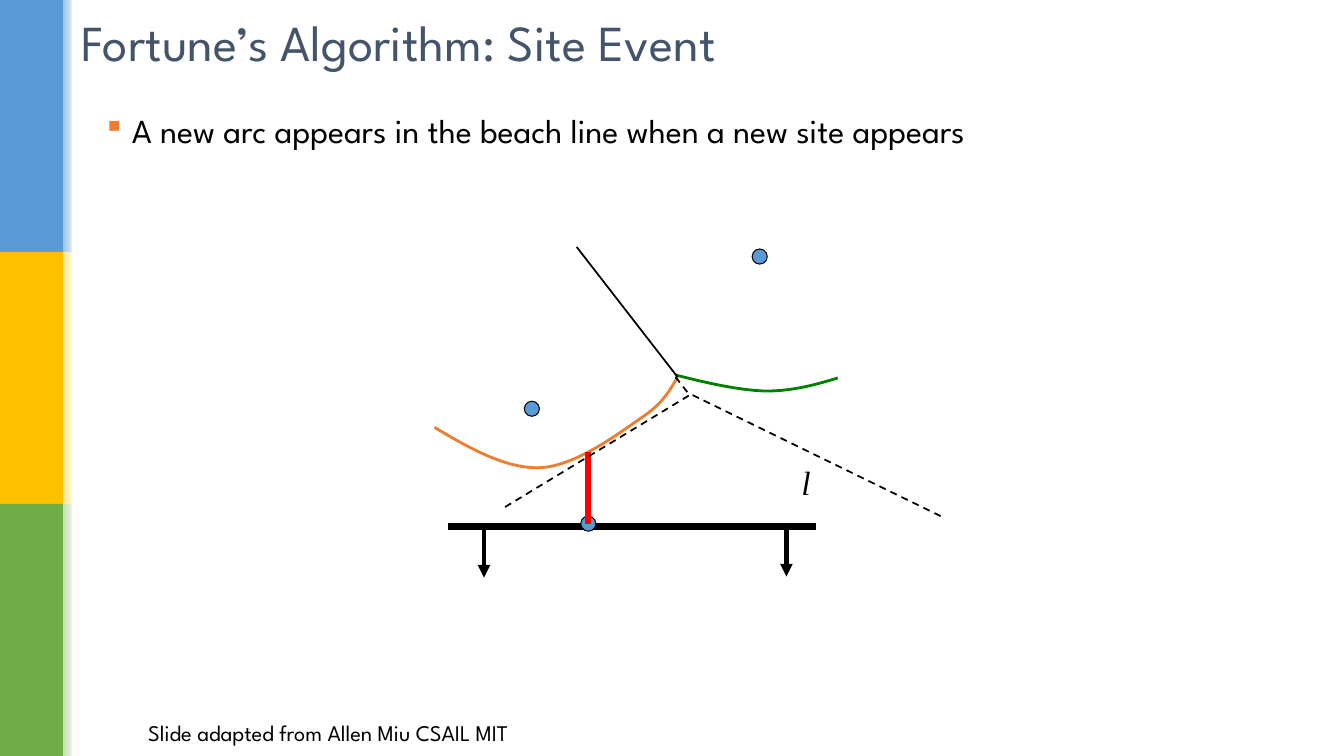
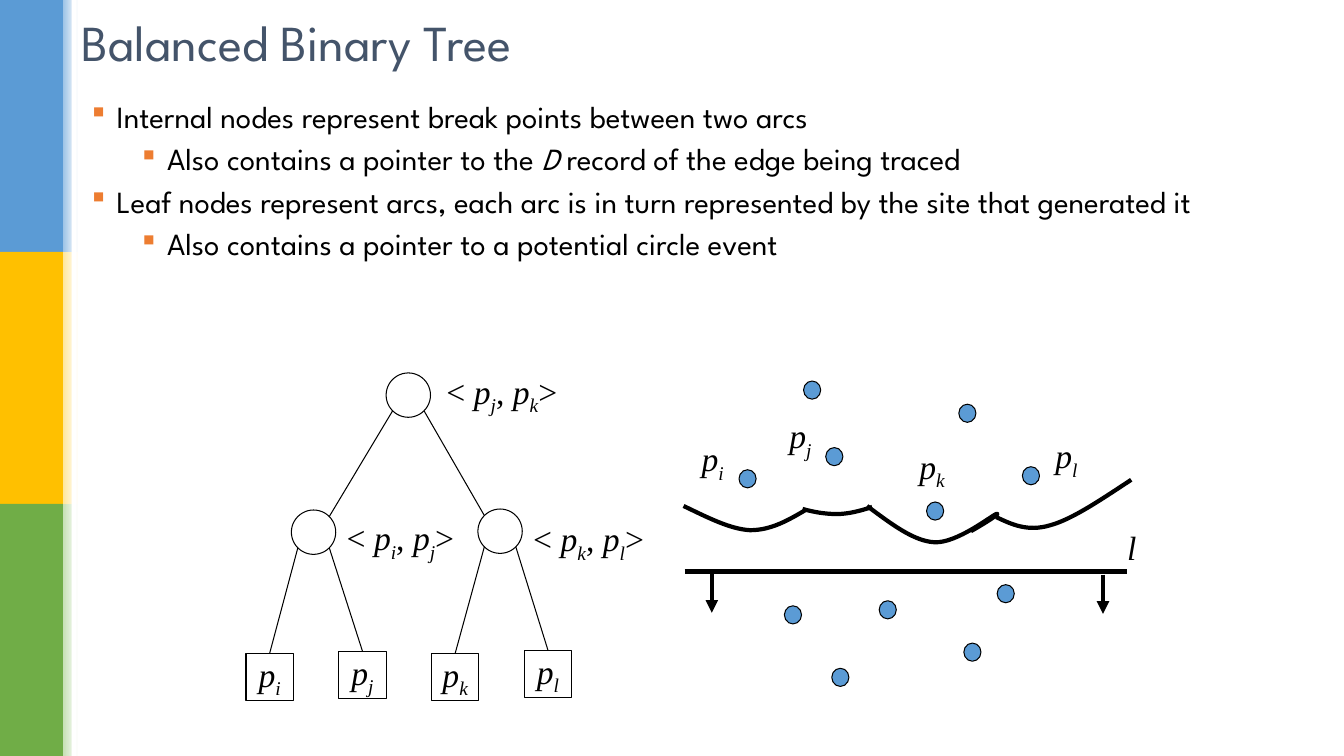
from pptx import Presentation
from pptx.util import Inches, Pt
from pptx.dml.color import RGBColor
from pptx.enum.dml import MSO_LINE as Dash
from pptx.enum.shapes import MSO_SHAPE as Shape, MSO_CONNECTOR as Conn
from pptx.enum.text import PP_ALIGN as Align, MSO_ANCHOR as Anchor
from pptx.oxml.ns import qn
from lxml.etree import SubElement as Sub

WIDE, HIGH = 13.33, 7.5
SANS, SERIF = "League Spartan", "Times New Roman"
BLACK, WHITE, SLATE = "000000", "FFFFFF", "44546A"
BLUE, ORANGE, GREEN, RED = "5B9BD5", "ED7D31", "008000", "FF0000"
BANDS = [(BLUE, "9DC3E6"), ("FFC000", "FFE699"), ("70AD47", "C5E0B4")]
BAND, FADE = 5 / 8, 5 / 32

EVENT = {
    "title": "Fortune’s Algorithm: Site Event",
    "box": (0.96, 1.09, 11.18, 1.36),
    "size": 24,
    "points": [(0, [("A new arc appears in the beach line when a new site appears", "")])],
    "sweep": {"ends": (4.44, 8.09), "y": 5.22, "width": 5, "label": (7.85, 4.53),
              "arrows": [(4.8, 5.25, 5.73), (7.8, 5.23, 5.72)]},
    "dot": (0.15, 0.15),
    "sites": [(5.2, 3.98), (7.46, 2.47), (5.76, 5.12)],
    "arcs": [
        (ORANGE, 2, [(4.31, 4.24), (4.66, 4.45), (5.02, 4.65), (5.35, 4.64), (5.69, 4.63),
                     (6.11, 4.32), (6.34, 4.16), (6.57, 4.01), (6.64, 3.88), (6.72, 3.74)]),
        (GREEN, 2, [(6.7, 3.72), (7.01, 3.8), (7.32, 3.87), (7.59, 3.88), (7.86, 3.88),
                    (8.08, 3.82), (8.31, 3.75)]),
    ],
}
EDGES = [
    ((5.83, 5.2), (5.83, 4.48), RED, 4, False),
    ((5.72, 2.45), (6.72, 3.74), BLACK, 1.25, False),
    ((5.01, 5.03), (6.84, 3.92), BLACK, 1.25, True),
    ((6.87, 3.92), (9.37, 5.14), BLACK, 1.25, True),
    ((6.7, 3.74), (6.84, 3.92), BLACK, 1.25, True),
]
CREDIT = "Slide adapted from Allen Miu CSAIL MIT"

TREE = {
    "title": "Balanced Binary Tree",
    "box": (0.81, 0.96, 11.9, 4.5),
    "size": 22,
    "points": [
        (0, [("Internal nodes represent break points between two arcs", "")]),
        (1, [("Also contains a pointer to the ", ""), ("D ", "i"),
             ("record of the edge being traced", "")]),
        (0, [("Leaf nodes represent arcs, each arc is in turn represented by "
              "the site that generated it", "")]),
        (1, [("Also contains a pointer to a potential circle event", "")]),
    ],
    "sweep": {"ends": (6.79, 11.18), "y": 5.67, "width": 3, "label": (11.08, 5.18),
              "arrows": [(7.06, 5.69, 6.08), (10.94, 5.7, 6.09)]},
    "dot": (0.17, 0.18),
    "sites": [(7.78, 6.01), (8.72, 5.96), (9.56, 6.38), (9.89, 5.8), (8.25, 6.63),
              (9.19, 4.98), (10.14, 4.63), (9.51, 4.01), (8.19, 4.44), (7.97, 3.78),
              (7.33, 4.66)],
    "arcs": [
        (BLACK, 3, [(6.78, 5.02), (7.01, 5.13), (7.24, 5.25), (7.44, 5.26), (7.65, 5.26),
                    (7.82, 5.16), (7.99, 5.06)]),
        (BLACK, 3, [(7.96, 5.05), (8.07, 5.08), (8.18, 5.1), (8.3, 5.1), (8.41, 5.1),
                    (8.53, 5.07), (8.65, 5.03)]),
        (BLACK, 3, [(8.6, 5.02), (8.83, 5.19), (9.06, 5.37), (9.27, 5.38), (9.49, 5.39),
                    (9.83, 5.12), (9.88, 5.1), (9.94, 5.08), (9.79, 5.18), (9.63, 5.27)]),
        (BLACK, 3, [(9.88, 5.13), (10.03, 5.2), (10.19, 5.28), (10.42, 5.21),
                    (10.64, 5.15), (10.93, 4.95), (11.22, 4.76)]),
    ],
}
NODES = [
    ((4.05, 3.92), "jk", (4.33, 3.63), 1.32),
    ((3.11, 5.28), "ij", (3.34, 5.08), 1.28),
    ((4.96, 5.27), "kl", (5.19, 5.09), 1.32),
]
LEAVES = [("i", 6.48), ("j", 6.46), ("k", 6.48), ("l", 6.45)]
TAGS = [("i", 6.86, 4.3, 0.43), ("j", 7.73, 4.07, 0.43),
        ("k", 9.02, 4.37, 0.48), ("l", 10.37, 4.27, 0.43)]
NODE, LEAF, FIRST, STEP = 0.44, 0.47, 2.44, 0.92


def rgb(code):
    return RGBColor.from_string(code)


def site(key):
    return [("p", "i"), (key, "is")]


def pair(a, b):
    return [("< ", "")] + site(a) + [(", ", "")] + site(b) + [(">", "")]


def pen(line, color, width):
    line.color.rgb = rgb(color)
    line.width = Pt(width)


def fill_runs(para, runs, size, face, color=BLACK):
    for text, style in runs:
        run = para.add_run()
        run.text = text
        font = run.font
        font.size, font.name = Pt(size), face
        font.italic = "i" in style
        font.color.rgb = rgb(color)
        if "s" in style:
            run._r.get_or_add_rPr().set("baseline", "-25000")


def add_text(slide, at, runs, size, face, color=BLACK, align=Align.LEFT,
             anchor=Anchor.TOP, wrap=True):
    frame = slide.shapes.add_textbox(*map(Inches, at)).text_frame
    frame.word_wrap, frame.vertical_anchor = wrap, anchor
    para = frame.paragraphs[0]
    para.alignment = align
    fill_runs(para, runs, size, face, color)


def add_label(slide, spot, runs, width):
    add_text(slide, (*spot, width, 0.5), runs, 24, SERIF, wrap=False)


def add_form(slide, kind, at, fill=None, edge=None):
    form = slide.shapes.add_shape(kind, *map(Inches, at))
    form.shadow.inherit = False
    if fill:
        form.fill.solid()
        form.fill.fore_color.rgb = rgb(fill)
    else:
        form.fill.background()
    if edge:
        pen(form.line, edge, 0.75)
    else:
        form.line.fill.background()
    return form


def add_line(slide, start, end, color=BLACK, width=0.75, dash=False, arrow=False):
    link = slide.shapes.add_connector(Conn.STRAIGHT, *map(Inches, (*start, *end)))
    pen(link.line, color, width)
    if dash:
        link.line.dash_style = Dash.DASH
    if arrow:
        Sub(link.line._get_or_add_ln(), qn("a:tailEnd"), type="triangle")
    Sub(link._element.spPr, qn("a:effectLst"))


def add_arc(slide, color, width, knots):
    spots = [(Inches(x), Inches(y)) for x, y in knots]
    pencil = slide.shapes.build_freeform(*spots[0])
    pencil.add_line_segments(spots[1:], close=False)
    arc = pencil.convert_to_shape()
    arc.shadow.inherit = False
    arc.fill.background()
    pen(arc.line, color, width)
    legs = list(arc._element.iter(qn("a:lnTo")))
    for n in range(0, len(legs), 3):
        curve = legs[n]
        curve.tag = qn("a:cubicBezTo")
        for leg in legs[n + 1:n + 3]:
            curve.append(leg[0])
            leg.getparent().remove(leg)


def add_points(slide, box, size, points):
    frame = slide.shapes.add_textbox(*map(Inches, box)).text_frame
    frame.word_wrap = True
    for n, (level, runs) in enumerate(points):
        para = frame.add_paragraph() if n else frame.paragraphs[0]
        props = para._p.get_or_add_pPr()
        props.set("marL", str(Inches(0.25 + 0.5 * level)))
        props.set("indent", str(Inches(-0.25)))
        Sub(Sub(props, qn("a:buClr")), qn("a:srgbClr"), val=ORANGE)
        Sub(props, qn("a:buFont"), typeface="Wingdings", charset="2")
        Sub(props, qn("a:buChar"), char="§")
        para.level = level
        para.line_spacing = 0.9
        para.space_before = Pt(0.3 * size if n else 0)
        fill_runs(para, runs, size, SANS)


def add_base(deck, data):
    slide = deck.slides.add_slide(deck.slide_layouts[6])
    tall = HIGH / len(BANDS)
    for n, (color, tint) in enumerate(BANDS):
        add_form(slide, Shape.RECTANGLE, (0, n * tall, BAND, tall), color)
        fade = add_form(slide, Shape.RECTANGLE, (BAND, n * tall, FADE, tall), tint).fill
        fade.gradient()
        fade.gradient_angle = 0
        for stop, shade, place in zip(fade.gradient_stops, (tint, WHITE), (0, 1)):
            stop.color.rgb = rgb(shade)
            stop.position = place
    add_form(slide, Shape.RECTANGLE, (0.71, 0, 0.05, HIGH), WHITE)
    add_text(slide, (0.71, 0, 10.48, 0.83), [(data["title"], "")], 36, SANS, SLATE,
             anchor=Anchor.MIDDLE)
    add_points(slide, data["box"], data["size"], data["points"])
    return slide


def add_beach(slide, data):
    sweep = data["sweep"]
    y = sweep["y"]
    left, right = sweep["ends"]
    add_line(slide, (left, y), (right, y), width=sweep["width"])
    for x, top, low in sweep["arrows"]:
        add_line(slide, (x, top), (x, low), width=3, arrow=True)
    add_label(slide, sweep["label"], [("l", "i")], 0.29)
    for spot in data["sites"]:
        add_form(slide, Shape.OVAL, (*spot, *data["dot"]), BLUE, BLACK)
    for arc in data["arcs"]:
        add_arc(slide, *arc)


def add_tree(slide):
    tops = [(FIRST + n * STEP + LEAF / 2, y) for n, (_, y) in enumerate(LEAVES)]
    rim = NODE / 2 * 0.71
    for (x, y), keys, spot, width in NODES:
        add_form(slide, Shape.OVAL, (x - NODE / 2, y - NODE / 2, NODE, NODE), edge=BLACK)
        add_label(slide, spot, pair(*keys), width)
    for (key, _), (x, y) in zip(LEAVES, tops):
        leaf = add_form(slide, Shape.RECTANGLE, (x - LEAF / 2, y, LEAF, LEAF), edge=BLACK)
        frame = leaf.text_frame
        frame.word_wrap, frame.vertical_anchor = False, Anchor.MIDDLE
        frame.paragraphs[0].alignment = Align.CENTER
        fill_runs(frame.paragraphs[0], site(key), 24, SERIF)
    mids = [node[0] for node in NODES]
    kids = [(mids[1][0] + rim, mids[1][1] - rim), (mids[2][0] - rim, mids[2][1] - rim)] + tops
    for n, end in enumerate(kids):
        x, y = mids[n // 2]
        side = rim if n % 2 else -rim
        add_line(slide, (x + side, y + rim), end)


def main():
    deck = Presentation()
    deck.slide_width, deck.slide_height = Inches(WIDE), Inches(HIGH)

    slide = add_base(deck, EVENT)
    add_beach(slide, EVENT)
    for edge in EDGES:
        add_line(slide, *edge)
    add_text(slide, (0.75, 7.03, 5.01, 0.47), [(CREDIT, "")], 16, SANS,
             align=Align.CENTER, anchor=Anchor.MIDDLE)

    slide = add_base(deck, TREE)
    add_tree(slide)
    add_beach(slide, TREE)
    for key, x, y, width in TAGS:
        add_label(slide, (x, y), site(key), width)

    deck.save("out.pptx")


if __name__ == "__main__":
    main()
